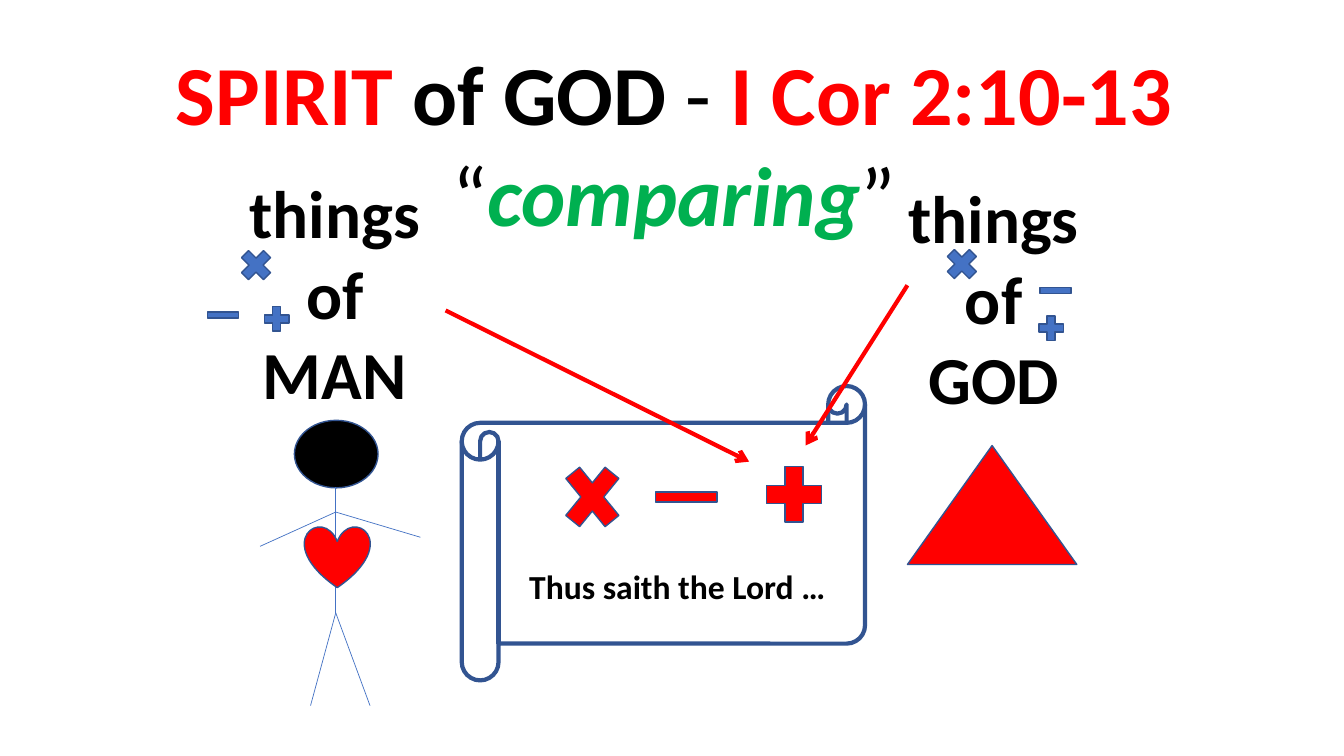
from lxml import etree
from pptx import Presentation
from pptx.dml.color import RGBColor
from pptx.enum import shapes, text
from pptx.oxml import ns
from pptx.util import Emu, Pt

PX = 9144  # 100 px to the inch
INK = {"red": "FF0000", "blue": "4472C4", "edge": "325491",
       "black": "000000", "green": "00B050"}
KIND = shapes.MSO_SHAPE


def px(*nums):
    return [Emu(n * PX) for n in nums]


def rgb(name):
    return RGBColor.from_string(INK[name])


def shape(slide, kind, box, fill=None, width=1):
    item = slide.shapes.add_shape(kind, *px(*box))
    item.shadow.inherit = False
    if fill:
        item.fill.solid()
        item.fill.fore_color.rgb = rgb(fill)
    else:
        item.fill.background()
    item.line.color.rgb = rgb("edge")
    item.line.width = Pt(width)


def line(slide, start, end, ink="blue", width=0.5, arrow=False):
    item = slide.shapes.add_connector(shapes.MSO_CONNECTOR.STRAIGHT, *px(*start, *end))
    item.line.color.rgb = rgb(ink)
    item.line.width = Pt(width)
    if arrow:
        etree.SubElement(item.line._get_or_add_ln(), ns.qn("a:tailEnd"), type="arrow")
    etree.SubElement(item._element.spPr, ns.qn("a:effectLst"))


def write(slide, box, rows, size, align=text.PP_ALIGN.CENTER):
    """Each row is a list of (words, ink, bold, italic) runs."""
    frame = slide.shapes.add_textbox(*px(*box)).text_frame
    frame.word_wrap = True
    for i, row in enumerate(rows):
        para = frame.add_paragraph() if i else frame.paragraphs[0]
        para.alignment = align
        for words, ink, bold, italic in row:
            run = para.add_run()
            run.text = words
            font = run.font
            font.name, font.size = "Calibri", Pt(size)
            font.bold, font.italic = bold, italic
            font.color.rgb = rgb(ink)


def title(slide, box):
    write(slide, box, [
        [("SPIRIT", "red", True, False), (" of GOD ", "black", True, False),
         ("- ", "black", False, False), ("I Cor 2:10-13", "red", True, False)],
        [("“", "black", False, False), ("comparing", "green", True, True),
         ("”", "black", False, False)],
    ], 60)


def things(slide, box, owner, times, minus, plus):
    """Label with three small signs, each at an offset from the box."""
    x, y = box[:2]
    write(slide, box, [[(f"things of {owner}", "black", True, False)]], 48)
    for kind, (dx, dy), w, h in ((KIND.MATH_MULTIPLY, times, 42, 42),
                                 (KIND.MATH_MINUS, minus, 42, 25),
                                 (KIND.MATH_PLUS, plus, 33, 33)):
        shape(slide, kind, (x + dx, y + dy, w, h), "blue")


def man(slide, x, y):
    """Stick figure; x is its spine and y the top of its head."""
    shape(slide, KIND.OVAL, (x - 41, y, 83, 67), "black")
    neck, chest, hip = (x, y + 66), (x, y + 91), (x, y + 191)
    line(slide, neck, hip)
    for joint, dx, dy in ((chest, 84, 25), (chest, -75, 34),
                          (hip, -25, 92), (hip, 34, 92)):
        line(slide, joint, (x + dx, joint[1] + dy))
    shape(slide, KIND.HEART, (x - 31, y + 105, 65, 61), "red")


def scroll(slide, box):
    x, y = box[:2]
    shape(slide, KIND.HORIZONTAL_SCROLL, box, width=3)
    for kind, dx, dy, w, h in ((KIND.MATH_MULTIPLY, 92, 64, 75, 92),
                               (KIND.MATH_MINUS, 181, 89, 83, 42),
                               (KIND.MATH_PLUS, 292, 70, 75, 75)):
        shape(slide, kind, (x + dx, y + dy, w, h), "red")
    write(slide, (x + 57, y + 174, 317, 50),
          [[("Thus saith the Lord …", "black", True, False)]], 24, text.PP_ALIGN.LEFT)


def main():
    deck = Presentation()
    deck.slide_width, deck.slide_height = px(1333, 750)
    slide = deck.slides.add_slide(deck.slide_layouts[6])

    title(slide, (70, 36, 1197, 212))

    # Man on the left
    things(slide, (232, 165, 200, 252), "MAN", (1, 77), (-32, 135), (26, 135))
    man(slide, 333, 417)

    # God on the right
    things(slide, (877, 170, 217, 252), "GOD", (56, 71), (149, 106), (149, 139))
    shape(slide, KIND.ISOSCELES_TRIANGLE, (900, 442, 168, 118), "red")

    # Scroll, with an arrow from each side
    scroll(slide, (458, 383, 400, 292))
    for start, end in (((442, 308), (743, 458)), ((900, 283), (799, 442))):
        line(slide, start, end, "red", 3, arrow=True)

    deck.save("out.pptx")


if __name__ == "__main__":
    main()
